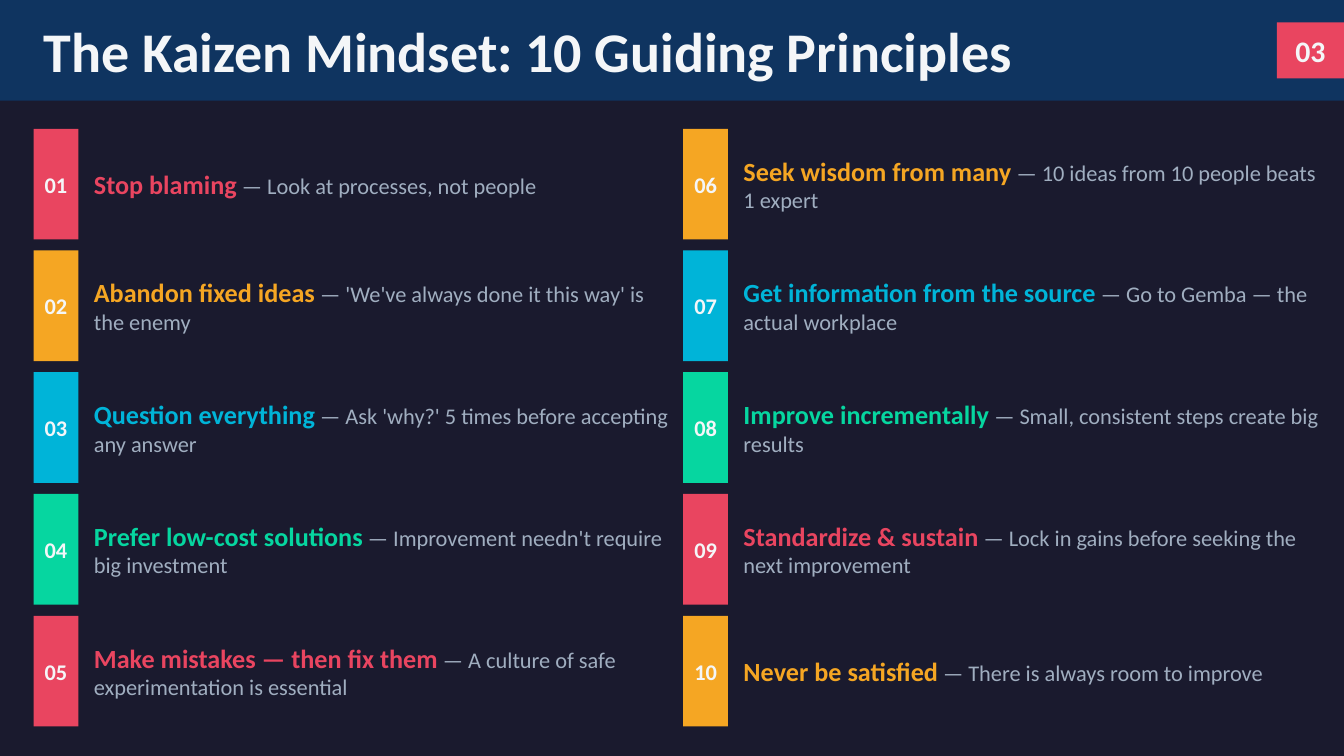
import pptx
import pptx.util
import pptx.dml.color
import pptx.enum.shapes
import pptx.enum.text

UNIT = pptx.util.Inches(1) / 9
ALIGN = pptx.enum.text.PP_ALIGN
ROWS = 5
ROW_HEIGHT = 9.87
ROW_GAP = 1
GRID_TOP = 11.5
GRID_LEFT = 3
COLUMN_STEP = 58

LIGHT = "F4F6F8"
MUTED = "A0AEC0"
RED = "E94560"
ACCENTS = [RED, "F5A623", "00B4D8", "06D6A0"]

PRINCIPLES = [
    ("Stop blaming", "Look at processes, not people"),
    ("Abandon fixed ideas", "'We've always done it this way' is the enemy"),
    ("Question everything", "Ask 'why?' 5 times before accepting any answer"),
    ("Prefer low-cost solutions", "Improvement needn't require big investment"),
    ("Make mistakes — then fix them", "A culture of safe experimentation is essential"),
    ("Seek wisdom from many", "10 ideas from 10 people beats 1 expert"),
    ("Get information from the source", "Go to Gemba — the actual workplace"),
    ("Improve incrementally", "Small, consistent steps create big results"),
    ("Standardize & sustain", "Lock in gains before seeking the next improvement"),
    ("Never be satisfied", "There is always room to improve"),
]


def color(value):
    return pptx.dml.color.RGBColor.from_string(value)


def grid(*cells):
    return [round(cell * UNIT) for cell in cells]


class Deck:
    font = "Calibri"

    def __init__(self):
        self.prs = pptx.Presentation()
        self.prs.slide_width, self.prs.slide_height = grid(120, 67.5)
        self.s = None

    def add_slide(self, background):
        self.s = self.prs.slides.add_slide(self.prs.slide_layouts[5])
        fill = self.s.background.fill
        fill.solid()
        fill.fore_color.rgb = color(background)

    def add_runs(self, sp, runs, align=ALIGN.LEFT):
        tf = sp.text_frame
        tf.word_wrap = True
        tf.auto_size = pptx.enum.text.MSO_AUTO_SIZE.NONE
        tf.vertical_anchor = pptx.enum.text.MSO_ANCHOR.MIDDLE
        p = tf.paragraphs[0]
        p.alignment = align
        for text, size, value, bold in runs:
            r = p.add_run()
            r.text = text
            r.font.name = self.font
            r.font.size = pptx.util.Pt(size)
            r.font.bold = bold
            r.font.color.rgb = color(value)

    def block(self, box, value):
        sp = self.s.shapes.add_shape(
            pptx.enum.shapes.MSO_SHAPE.RECTANGLE, *grid(*box))
        sp.shadow.inherit = False
        sp.fill.solid()
        sp.fill.fore_color.rgb = color(value)
        sp.line.fill.background()
        return sp

    def header(self, text, box, bar, value):
        sp = self.s.shapes.title
        sp.element.addprevious(self.block(bar, value).element)
        sp.left, sp.top, sp.width, sp.height = grid(*box)
        self.add_runs(sp, [(text, 40, LIGHT, True)])

    def badge(self, text, box, value, size):
        sp = self.block(box, value)
        sp.text_frame.margin_left = sp.text_frame.margin_right = 0
        self.add_runs(sp, [(text, size, LIGHT, True)], ALIGN.CENTER)

    def text(self, runs, box):
        sp = self.s.shapes.add_textbox(*grid(*box))
        self.add_runs(sp, runs)


def main():
    deck = Deck()
    deck.add_slide("1A1A2E")
    deck.header("The Kaizen Mindset: 10 Guiding Principles",
                (3, 1, 100, 7), (0, 0, 120, 9), "0F3460")
    deck.badge("03", (114, 2, 6, 5), RED, 21.3)
    for i, (name, detail) in enumerate(PRINCIPLES):
        column, row = divmod(i, ROWS)
        left = GRID_LEFT + column * COLUMN_STEP
        top = GRID_TOP + row * (ROW_HEIGHT + ROW_GAP)
        accent = ACCENTS[i % len(ACCENTS)]
        deck.badge(f"{i + 1:02d}", (left, top, 4, ROW_HEIGHT), accent, 16)
        deck.text([(name, 18.7, accent, True), (f" — {detail}", 16, MUTED, False)],
                  (left + 4.5, top, 54, ROW_HEIGHT))
    deck.prs.save("out.pptx")


if __name__ == "__main__":
    main()
